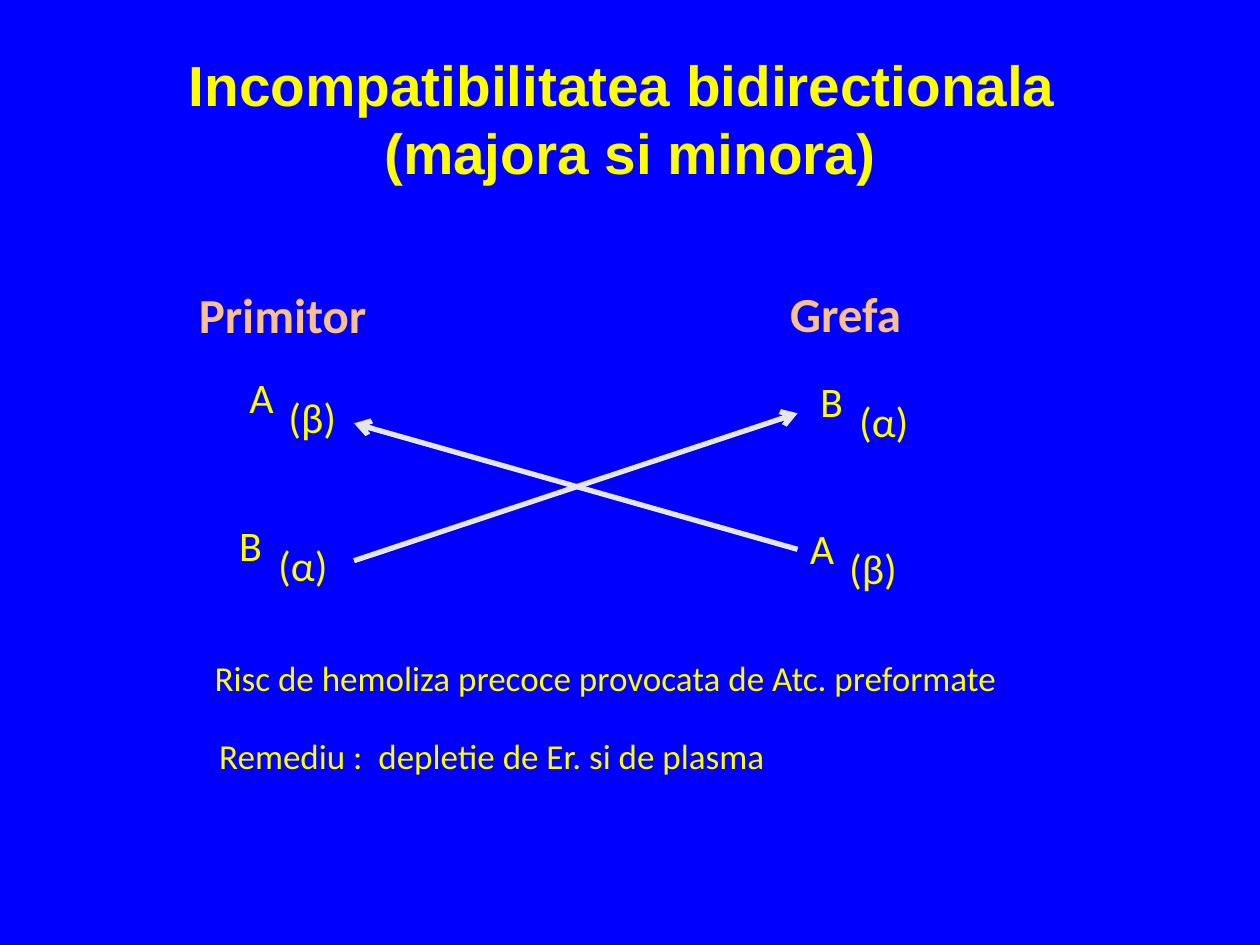
from lxml import etree
from pptx import Presentation
from pptx.dml.color import RGBColor
from pptx.enum.shapes import MSO_CONNECTOR
from pptx.enum.text import MSO_ANCHOR, PP_ALIGN
from pptx.oxml.ns import qn
from pptx.util import Inches, Pt

LEFT, CENTER = PP_ALIGN.LEFT, PP_ALIGN.CENTER
TOP, MIDDLE = MSO_ANCHOR.TOP, MSO_ANCHOR.MIDDLE
STRAIGHT = MSO_CONNECTOR.STRAIGHT
BLUE, YELLOW, PEACH, GREY = "0000FF", "FFFF00", "FAC090", "E6E6E6"

# Content
TITLE = "Incompatibilitatea bidirectionala \v(majora si minora)"
HEADS = [("Primitor", 1.48, 2.21), ("Grefa", 6.17, 2.2)]
NOTES = [  # text, left, top, width
    ("Risc de hemoliza precoce provocata de Atc. preformate", 1.17, 5.16, 7.27),
    ("Remediu :  depletie de Er. si de plasma", 0.78, 5.78, 6.25),
]
GROUPS = [  # rows of (antigen, antibody), one per column
    [("A", "(β)"), ("B", "(α)")],
    [("B", "(α)"), ("A", "(β)")],
]
ARROWS = [((2.81, 4.45), (6.33, 3.28)), ((6.33, 4.36), (2.81, 3.36))]

# Grid of blood groups: origin, step per column, step per row
X, Y = 1.88, 2.9
COL = (4.53, 0.03)
ROW = (-0.08, 1.17)
SUB = (0.31, 0.16)  # antibody offset from its antigen

prs = Presentation()
prs.slide_width, prs.slide_height = Inches(10), Inches(7.5)
slide = prs.slides.add_slide(prs.slide_layouts[6])


def rgb(code):
    return RGBColor.from_string(code)


def label(text, x, y, w, h, size, color=YELLOW, bold=False,
          font="Calibri", align=LEFT, anchor=TOP):
    box = slide.shapes.add_textbox(Inches(x), Inches(y), Inches(w), Inches(h))
    frame = box.text_frame
    frame.word_wrap = True
    frame.vertical_anchor = anchor
    para = frame.paragraphs[0]
    para.text = text
    para.alignment = align
    para.font.name = font
    para.font.size = Pt(size)
    para.font.bold = bold
    para.font.color.rgb = rgb(color)


def arrow(start, end):
    line = slide.shapes.add_connector(
        STRAIGHT, *(Inches(v) for v in start + end))
    line.line.color.rgb = rgb(GREY)
    line.line.width = Pt(3)
    etree.SubElement(line.line._get_or_add_ln(), qn("a:tailEnd"), type="arrow")
    etree.SubElement(line._element.spPr, qn("a:effectLst"))


# Background and title
fill = slide.background.fill
fill.solid()
fill.fore_color.rgb = rgb(BLUE)
label(TITLE, 0.5, 0.31, 9, 1.25, 32.4, bold=True, font="Arial",
      align=CENTER, anchor=MIDDLE)

# Column heads and notes
for text, x, y in HEADS:
    label(text, x, y, 1.88, 0.57, 28, PEACH, bold=True)
for text, x, y, w in NOTES:
    label(text, x, y, w, 0.44, 20, align=CENTER)

# Blood groups
for r, row in enumerate(GROUPS):
    for c, (gen, body) in enumerate(row):
        x = X + c * COL[0] + r * ROW[0]
        y = Y + c * COL[1] + r * ROW[1]
        label(gen, x, y, 0.62, 0.51, 24)
        label(body, x + SUB[0], y + SUB[1], 0.78, 0.51, 24)

# Crossing arrows
for start, end in ARROWS:
    arrow(start, end)

prs.save("out.pptx")
